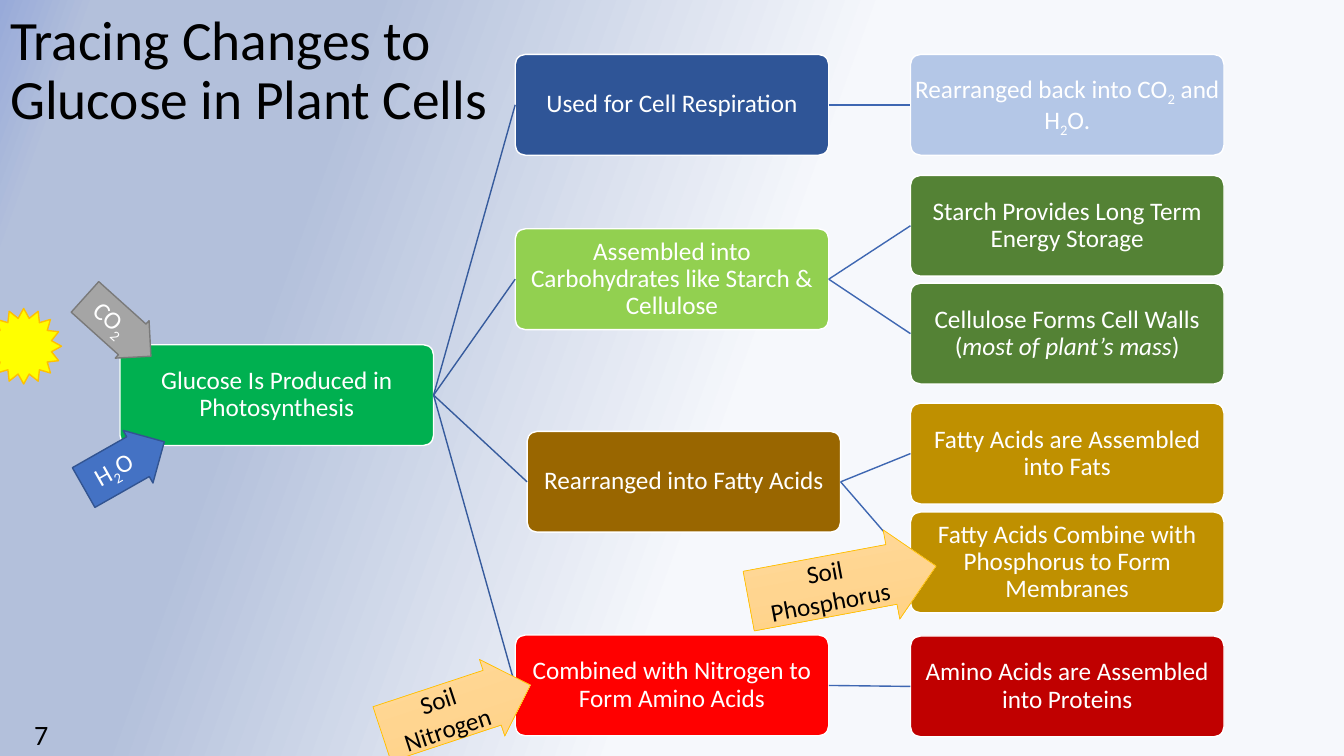
from dataclasses import dataclass
from typing import Any

from lxml.etree import SubElement
from pptx import Presentation
from pptx.dml.color import RGBColor as Rgb
from pptx.enum.shapes import MSO_CONNECTOR as Conn, MSO_SHAPE as Kind
from pptx.enum.text import MSO_ANCHOR as Anchor, MSO_AUTO_SIZE as Fit, PP_ALIGN as Align
from pptx.oxml.ns import qn
from pptx.util import Inches, Pt

# Grid of boxes, in inches; rows are one box tall
WIDE, HIGH = 13.33, 7.5
LEFT, TOP, PITCH = 1.19, 0.54, 3.92
BOX_W, BOX_H = 3.11, 1.0

HUES = {
    "white": "FFFFFF", "black": "000000", "leaf": "00B050",
    "navy": "2F5597", "sky": "B4C7E7", "lime": "92D050", "moss": "548235",
    "brown": "996600", "ochre": "BF9000", "red": "FF0000", "wine": "C00000",
    "blue": "4472C4", "ink": "325491", "grey": "A5A5A5", "slate": "7A7A7A",
    "gold": "FFC000", "sun": "FFFF00", "stem": "365B9D", "twig": "3E67B2",
}
SKY = [(0, "F6F8FC"), (45, "F6F8FC"), (77, "B3C0DB"), (94, "B3C0DB"), (100, "98AAD9")]
SOIL = [(0, "FFDB9E"), (50, "FFD590"), (100, "FFD07C")]


@dataclass
class Box:
    key: str
    col: float
    row: float
    hue: str
    text: str
    root: str = ""


@dataclass
class Arrow:
    text: str
    x: float
    y: float
    w: float
    h: float
    turn: float
    shaft: float
    fill: str
    line: str
    ink: str = "white"
    pen: float = 1


# In texts, | parts the runs, _ starts a subscript and * an italic run
BOXES = [
    Box("sugar", 0, 2.88, "leaf", "Glucose Is Produced in Photosynthesis"),
    Box("burn", 1, 0, "navy", "Used for Cell Respiration", "sugar"),
    Box("gas", 2, 0, "sky", "Rearranged back into CO|_2| and H|_2|O.", "burn"),
    Box("carb", 1, 1.73, "lime", "Assembled into Carbohydrates like Starch & Cellulose", "sugar"),
    Box("starch", 2, 1.2, "moss", "Starch Provides Long Term Energy Storage", "carb"),
    Box("wall", 2, 2.27, "moss", "Cellulose Forms Cell Walls (|*most of plant’s mass|)", "carb"),
    Box("acid", 1.03, 3.74, "brown", "Rearranged into Fatty Acids", "sugar"),
    Box("fat", 2, 3.46, "ochre", "Fatty Acids are Assembled into Fats", "acid"),
    Box("skin", 2, 4.54, "ochre", "Fatty Acids Combine with Phosphorus to Form Membranes", "acid"),
    Box("amino", 1, 5.76, "red", "Combined with Nitrogen to Form Amino Acids", "sugar"),
    Box("meat", 2, 5.77, "wine", "Amino Acids are Assembled into Proteins", "amino"),
]
ARROWS = [
    Arrow("H|_2|O", 0.77, 4.31, 0.92, 0.6, 330.4, 0.755, "blue", "ink"),
    Arrow("CO|_2", 0.73, 2.99, 0.88, 0.5, 42, 0.817, "grey", "slate"),
    Arrow("Soil Nitrogen", 3.75, 6.64, 1.55, 0.8, 341.7, 0.715, "soil", "gold", "black", 0.5),
    Arrow("Soil Phosphorus", 7.41, 5.34, 1.89, 0.9, 349.4, 0.669, "soil", "gold", "black", 0.5),
]


def put(thing: Any, vals: dict[str, Any]) -> None:
    for name, val in vals.items():
        setattr(thing, name, val)


def hue(name: str) -> Rgb:
    return Rgb.from_string(HUES[name])


def grade(owner: Any, fill: Any, stops: list[tuple[int, str]], turn: int) -> None:
    fill.gradient()
    grad = owner.element.find(".//" + qn("a:gradFill"))
    for part in list(grad):
        grad.remove(part)
    rack = SubElement(grad, qn("a:gsLst"))
    for pos, code in stops:
        stop = SubElement(rack, qn("a:gs"), pos=str(pos * 1000))
        SubElement(stop, qn("a:srgbClr"), val=code)
    SubElement(grad, qn("a:lin"), ang=str(turn * 60000), scaled="0")


def write(shape: Any, text: str, ink: str, size: float = 18, gap: float = 1,
          side: Any = Align.CENTER, **frame: Any) -> None:
    body = shape.text_frame
    put(body, {"word_wrap": True, "auto_size": Fit.NONE,
               "vertical_anchor": Anchor.MIDDLE, **frame})
    para = body.paragraphs[0]
    put(para, {"alignment": side, "line_spacing": gap})
    for bit in text.split("|"):
        run = para.add_run()
        run.text = bit.lstrip("_*")
        put(run.font, {"name": "Calibri", "size": Pt(size)})
        run.font.color.rgb = hue(ink)
        if bit.startswith("*"):
            run.font.italic = True
        if bit.startswith("_"):
            run.font.element.set("baseline", "-25000") if hasattr(run.font, "element") \
                else run._r.get_or_add_rPr().set("baseline", "-25000")


def draw(slide: Any, kind: Any, area: tuple[float, ...], fill: str, line: str,
         pen: float = 1) -> Any:
    shape = slide.shapes.add_shape(kind, *map(Inches, area))
    shape.shadow.inherit = False
    if fill == "soil":
        grade(shape, shape.fill, SOIL, 90)
    else:
        shape.fill.solid()
        shape.fill.fore_color.rgb = hue(fill)
    shape.line.color.rgb = hue(line)
    shape.line.width = Pt(pen)
    return shape


def link(slide: Any, start: Any, end: Any, tint: str) -> None:
    line = slide.shapes.add_connector(Conn.STRAIGHT, 0, 0, 0, 0)
    line.begin_connect(start, 3)
    line.end_connect(end, 1)
    line.line.color.rgb = hue(tint)
    line.line.width = Pt(1)
    SubElement(line.element.spPr, qn("a:effectLst"))


def main() -> None:
    deck = Presentation()
    put(deck, {"slide_width": Inches(WIDE), "slide_height": Inches(HIGH)})
    slide = deck.slides.add_slide(deck.slide_layouts[5])
    grade(slide, slide.background.fill, SKY, 200)

    # Slide number and title
    page = slide.shapes.add_textbox(*map(Inches, (0.18, 6.86, 0.46, 0.79)))
    write(page, "7", "black", 20, 1.2, margin_left=0, margin_right=0,
          margin_top=Inches(0.2), margin_bottom=Inches(0.2))
    title = slide.shapes.title
    put(title, dict(zip(("left", "top", "width", "height"), map(Inches, (0, 0.25, 5.61, 0.93)))))
    write(title, "Tracing Changes to\vGlucose in Plant Cells", "black", 39.6, 0.9, Align.LEFT)
    # A run keeps no line break, so split the title at it
    para = title.text_frame.paragraphs[0]
    first, last = "Tracing Changes to", "Glucose in Plant Cells"
    para.runs[0].text = first
    para.add_line_break()
    tail = para.add_run()
    tail.text = last
    put(tail.font, {"name": "Calibri", "size": Pt(39.6)})
    tail.font.color.rgb = hue("black")

    # Tree of boxes
    made: dict[str, Any] = {}
    edge = Inches(0.01)
    for box in BOXES:
        area = (LEFT + box.col * PITCH, TOP + box.row * BOX_H, BOX_W, BOX_H)
        shape = draw(slide, Kind.ROUNDED_RECTANGLE, area, box.hue, "white")
        shape.adjustments[0] = 0.1
        write(shape, box.text, "white", gap=0.9, margin_left=edge, margin_right=edge,
              margin_top=edge, margin_bottom=edge)
        made[box.key] = shape
        if box.root:
            link(slide, made[box.root], shape, "stem" if box.root == "sugar" else "twig")

    # Inputs from air, water, soil and sun
    for item in ARROWS:
        area = (item.x, item.y, item.w, item.h)
        shape = draw(slide, Kind.RIGHT_ARROW, area, item.fill, item.line, item.pen)
        shape.rotation = item.turn
        shape.adjustments[0] = item.shaft
        write(shape, item.text, item.ink)
    draw(slide, Kind.STAR_16_POINT, (-0.14, 3.06, 0.75, 0.75), "sun", "gold")

    deck.save("out.pptx")


if __name__ == "__main__":
    main()
